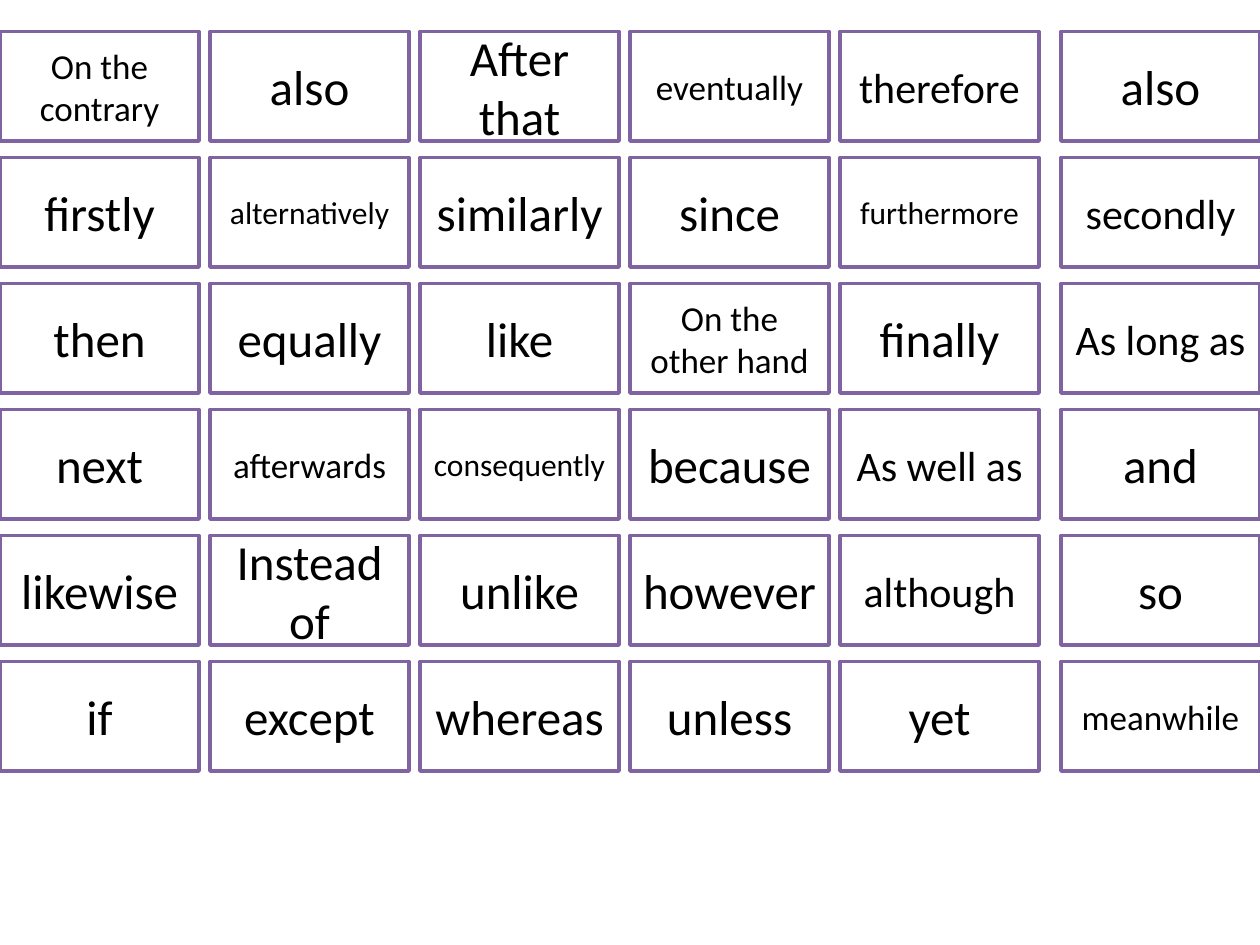
from pptx import Presentation
from pptx.dml.color import RGBColor
from pptx.enum import shapes, text
from pptx.util import Inches, Pt

# Content: connective cards, row by row
CARDS = [
    ["On the contrary", "also", "After that", "eventually", "therefore", "also"],
    ["firstly", "alternatively", "similarly", "since", "furthermore", "secondly"],
    ["then", "equally", "like", "On the other hand", "finally", "As long as"],
    ["next", "afterwards", "consequently", "because", "As well as", "and"],
    ["likewise", "Instead of", "unlike", "however", "although", "so"],
    ["if", "except", "whereas", "unless", "yet", "meanwhile"],
]
# Longer words that need a smaller size than the usual one
SMALLER = {
    "medium": ["therefore", "secondly", "As long as", "As well as", "although"],
    "small": ["On the contrary", "eventually", "On the other hand",
              "afterwards", "meanwhile"],
    "tiny": ["alternatively", "furthermore", "consequently"],
}

THEME = {
    "font": "Calibri",
    "ink": RGBColor(0x00, 0x00, 0x00),
    "card": RGBColor(0xFF, 0xFF, 0xFF),
    "border": RGBColor(0x80, 0x64, 0xA2),
    "border_width": Pt(2),
    "sizes": {"large": 28, "medium": 24, "small": 20, "tiny": 18},
}

# Grid: even columns, with the last one flush with the right edge
SLIDE_W, SLIDE_H = 10, 7.5
CARD_W, CARD_H = 1.58, 0.87
TOP, ROW_STEP = 0.25, 1
COL_STEP = SLIDE_W / 6
LEFTS = [col * COL_STEP for col in range(5)] + [SLIDE_W - CARD_W]

SIZE_OF = {word: name for name, words in SMALLER.items() for word in words}


def write(sp, words, size, color=THEME["ink"], font=THEME["font"]):
    tf = sp.text_frame
    tf.word_wrap = True
    tf.vertical_anchor = text.MSO_ANCHOR.MIDDLE
    p = tf.paragraphs[0]
    p.alignment = text.PP_ALIGN.CENTER
    r = p.add_run()
    r.text = words
    r.font.name, r.font.size, r.font.color.rgb = font, Pt(size), color


def add_card(slide, words, left, top):
    sp = slide.shapes.add_shape(
        shapes.MSO_SHAPE.RECTANGLE,
        Inches(left), Inches(top), Inches(CARD_W), Inches(CARD_H))
    sp.shadow.inherit = False
    sp.fill.solid()
    sp.fill.fore_color.rgb = THEME["card"]
    sp.line.color.rgb = THEME["border"]
    sp.line.width = THEME["border_width"]
    write(sp, words, THEME["sizes"][SIZE_OF.get(words, "large")])


def main():
    prs = Presentation()
    prs.slide_width, prs.slide_height = Inches(SLIDE_W), Inches(SLIDE_H)
    slide = prs.slides.add_slide(prs.slide_layouts[6])  # blank layout

    # Cards
    for row, words_in_row in enumerate(CARDS):
        for left, words in zip(LEFTS, words_in_row):
            add_card(slide, words, left, TOP + row * ROW_STEP)

    prs.save("out.pptx")


if __name__ == "__main__":
    main()
